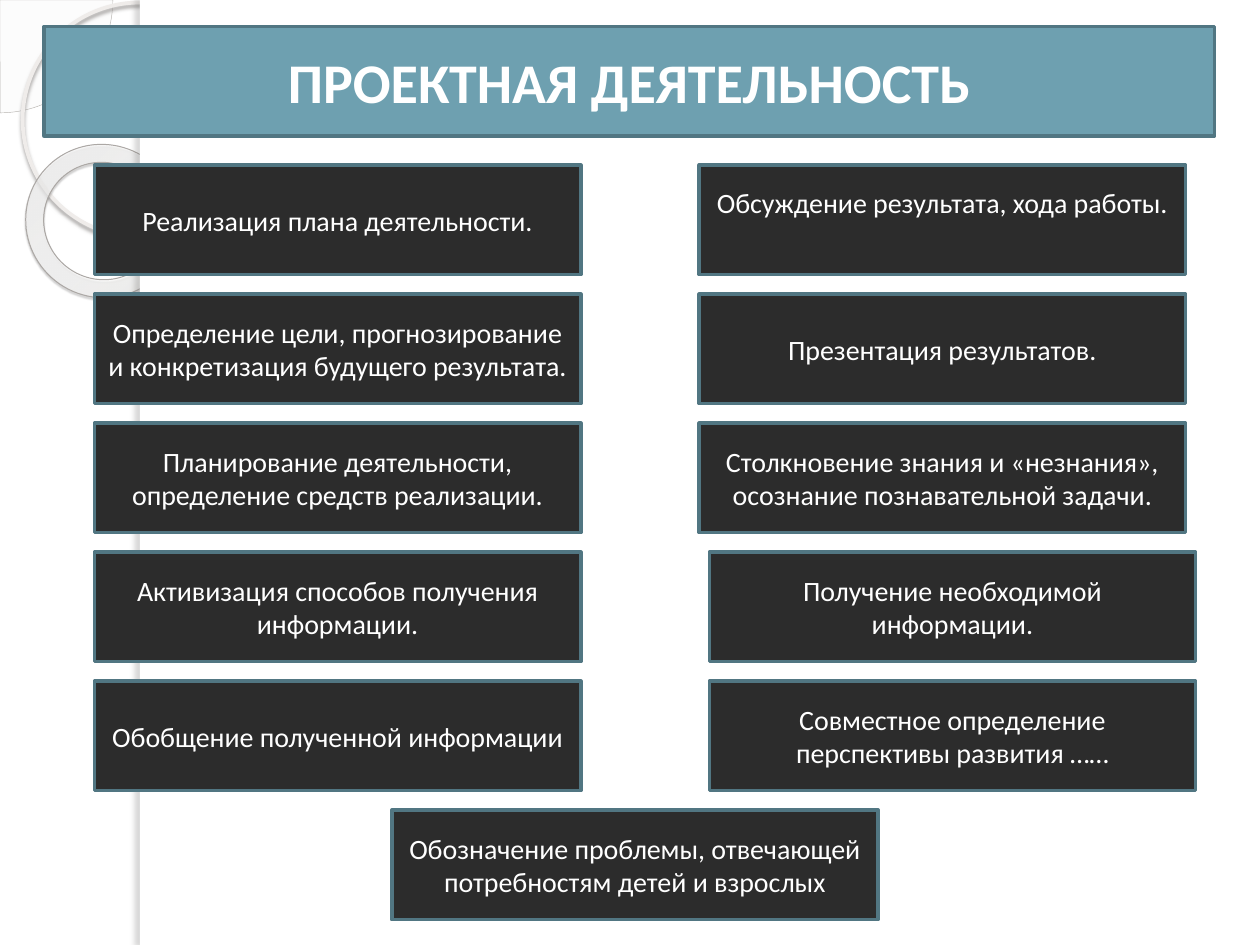
from lxml import etree
from pptx import Presentation
from pptx import util as u
from pptx.dml.color import RGBColor
from pptx.enum import shapes, text
from pptx.oxml import parse_xml
from pptx.oxml.ns import nsdecls, qn

SLIDE_WIDTH, SLIDE_HEIGHT = 10, 7.5
COLORS = {
    "paper": "FFFFFF", "text": "FFFFFF", "banner": "6EA0B0", "card": "2C2C2C",
    "border": "517682", "pie": "F8F8F7", "pie_line": "B7B4B0",
    "ring": "EFECEA", "ring_shadow": "9E9B99",
    "donut_line": "ACA8A5", "donut_shadow": "4F4D4C", "edge_shadow": "696867",
}
DONUT_STOPS = [(0, "FAFAF9", 70), (70, "FDFDFC", 55), (100, "C0B9B3", 60)]

CARD_WIDTH, CARD_HEIGHT = 3.86, 0.87
ROW_PITCH = 1.024
LINE_HEIGHT = 0.27
LEFT_STEPS = [
    "Реализация плана деятельности.",
    "Определение цели, прогнозирование и конкретизация будущего результата.",
    "Планирование деятельности, определение средств реализации.",
    "Активизация способов получения информации.",
    "Обобщение полученной информации",
]
RIGHT_STEPS = [
    "Обсуждение результата, хода работы.",
    "Презентация результатов.",
    "Столкновение знания и «незнания», осознание познавательной задачи.",
]
LOWER_RIGHT_STEPS = [
    "Получение необходимой информации.",
    "Совместное определение перспективы развития ……",
]
FIRST_STEP = "Обозначение проблемы, отвечающей потребностям детей и взрослых"


def add_figure(slide, kind, box, fill=None, line=None, line_width=1):
    shape = slide.shapes.add_shape(kind, *(u.Inches(length) for length in box))
    shape.shadow.inherit = False
    if fill:
        shape.fill.solid()
        shape.fill.fore_color.rgb = RGBColor.from_string(COLORS[fill])
    else:
        shape.fill.background()
    if line:
        shape.line.color.rgb = RGBColor.from_string(COLORS[line])
        shape.line.width = u.Pt(line_width)
    else:
        shape.line.fill.background()
    return shape


def add_shadow(shape, color, opacity, blur, distance, angle):
    effects = shape._element.spPr.find(qn("a:effectLst"))
    effects.append(parse_xml(
        f'<a:outerShdw {nsdecls("a")} blurRad="{u.Pt(blur)}" dist="{u.Pt(distance)}" '
        f'dir="{angle * 60000}" algn="tl" rotWithShape="0">'
        f'<a:srgbClr val="{COLORS[color]}"><a:alpha val="{opacity * 1000}"/></a:srgbClr>'
        f'</a:outerShdw>'))


def set_opacity(shape, opacity):
    color = shape._element.spPr.find(qn("a:solidFill"))[0]
    etree.SubElement(color, qn("a:alpha")).set("val", str(opacity * 1000))


def set_radial_fill(shape, stops, left, top, right, bottom):
    properties = shape._element.spPr
    stop_xml = "".join(
        f'<a:gs pos="{position * 1000}"><a:srgbClr val="{color}">'
        f'<a:alpha val="{opacity * 1000}"/></a:srgbClr></a:gs>'
        for position, color, opacity in stops)
    gradient = parse_xml(
        f'<a:gradFill {nsdecls("a")} rotWithShape="1"><a:gsLst>{stop_xml}</a:gsLst>'
        f'<a:path path="circle"><a:fillToRect l="{left * 1000}" t="{top * 1000}" '
        f'r="{right * 1000}" b="{bottom * 1000}"/></a:path></a:gradFill>')
    properties.replace(properties.find(qn("a:noFill")), gradient)


def write_text(shape, words, size, bold=False):
    frame = shape.text_frame
    frame.word_wrap = True
    frame.vertical_anchor = text.MSO_ANCHOR.MIDDLE
    paragraph = frame.paragraphs[0]
    paragraph.text = words
    paragraph.alignment = text.PP_ALIGN.CENTER
    paragraph.font.name = "Calibri"
    paragraph.font.size = u.Pt(size)
    paragraph.font.bold = bold
    paragraph.font.color.rgb = RGBColor.from_string(COLORS["text"])


def draw_side_ornament(slide, strip_width):
    """Circles on the left strip, cut off by the white page."""
    kinds = shapes.MSO_SHAPE
    radius = 0.895
    pie = add_figure(slide, kinds.PIE, (-radius, -radius, 2 * radius, 2 * radius),
                     "pie", "pie_line", 0.25)
    pie.adjustments[0], pie.adjustments[1] = 0, 54
    set_opacity(pie, 33)

    ring = add_figure(slide, kinds.OVAL, (0.18, 0.02, 1.86, 1.86), None, "ring", 2.15)
    add_shadow(ring, "ring_shadow", 85, 2, 2, 90)

    donut = add_figure(slide, kinds.DONUT, (0.2, 1.15, 1.23, 1.21), None, "donut_line", 0.58)
    donut.adjustments[0] = 0.118
    donut.rotation = 38.6
    set_radial_fill(donut, DONUT_STOPS, -408, -50, 508, 150)
    add_shadow(donut, "donut_shadow", 35, 1, 1.2, 75)

    page_width = SLIDE_WIDTH - strip_width
    add_figure(slide, kinds.RECTANGLE, (strip_width, 0, page_width, SLIDE_HEIGHT), "paper")
    edge = add_figure(slide, kinds.RECTANGLE, (strip_width, 0, 0.08, SLIDE_HEIGHT), "paper")
    add_shadow(edge, "edge_shadow", 25, 3, 3, 180)


def draw_banner(slide, box, words):
    banner = add_figure(slide, shapes.MSO_SHAPE.RECTANGLE, box, "banner", "border", 2)
    write_text(banner, words, 32, bold=True)


def draw_cards(slide, left, top, steps):
    """Column of equal cards; returns them from top to bottom."""
    cards = []
    for row, words in enumerate(steps):
        box = (left, top + row * ROW_PITCH, CARD_WIDTH, CARD_HEIGHT)
        card = add_figure(slide, shapes.MSO_SHAPE.RECTANGLE, box, "card", "border", 2)
        write_text(card, words, 16)
        cards.append(card)
    return cards


def main():
    presentation = Presentation()
    presentation.slide_width = u.Inches(SLIDE_WIDTH)
    presentation.slide_height = u.Inches(SLIDE_HEIGHT)
    slide = presentation.slides.add_slide(presentation.slide_layouts[6])

    draw_side_ornament(slide, 1.11)
    draw_banner(slide, (0.35, 0.21, 9.29, 0.87), "ПРОЕКТНАЯ ДЕЯТЕЛЬНОСТЬ")

    top = 1.31
    draw_cards(slide, 0.75, top, LEFT_STEPS)
    discussion = draw_cards(slide, 5.55, top, RIGHT_STEPS)[0]
    discussion.text_frame.margin_bottom = u.Inches(0.05 + LINE_HEIGHT)
    draw_cards(slide, 5.63, top + len(RIGHT_STEPS) * ROW_PITCH, LOWER_RIGHT_STEPS)
    draw_cards(slide, 3.11, top + len(LEFT_STEPS) * ROW_PITCH, [FIRST_STEP])

    presentation.save("out.pptx")


if __name__ == "__main__":
    main()
